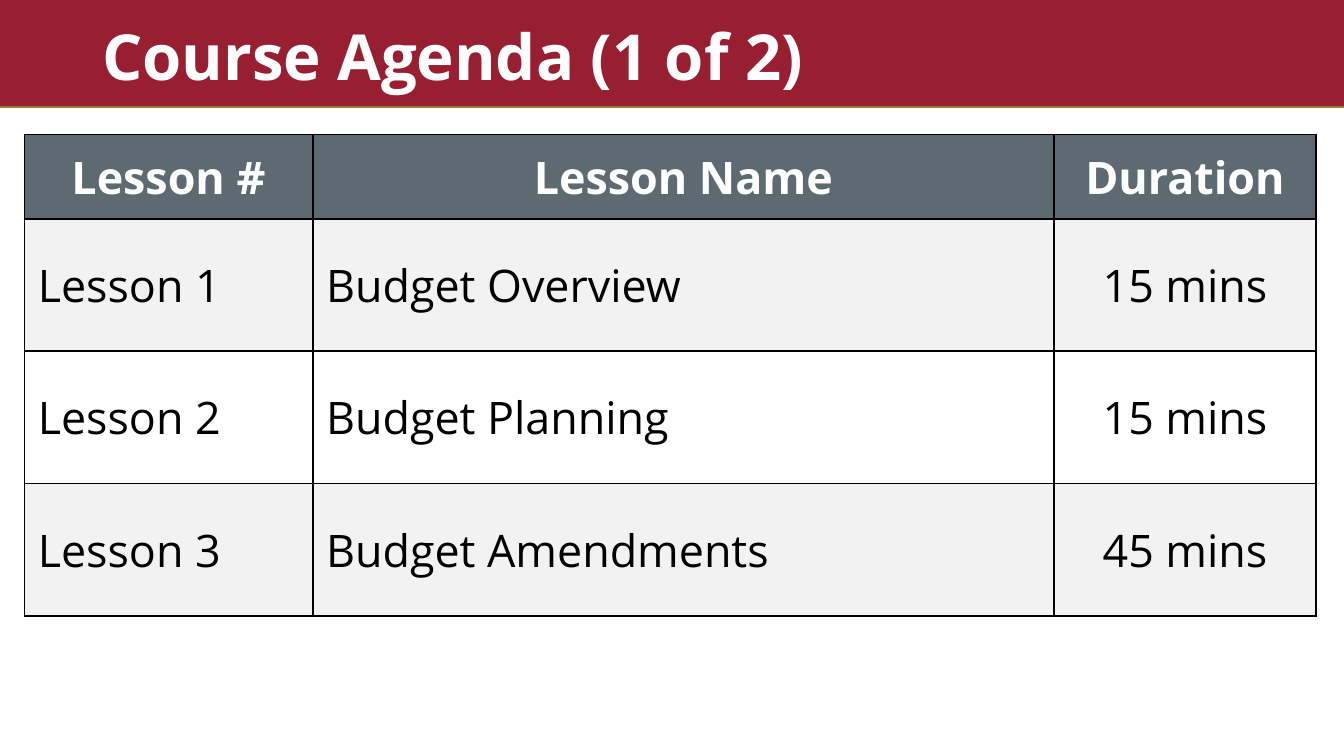
import pptx
import pptx.dml.color
import pptx.enum.shapes
import pptx.enum.text
import pptx.oxml
import pptx.oxml.ns
import pptx.util
from pptx.util import Cm, Pt

FONT = "Open Sans"
TITLE = "Course Agenda (1 of 2)"
AGENDA = [
    ("Lesson #", "Lesson Name", "Duration"),
    ("Lesson 1", "Budget Overview", "15 mins"),
    ("Lesson 2", "Budget Planning", "15 mins"),
    ("Lesson 3", "Budget Amendments", "45 mins"),
]
COLUMN_WIDTHS = [5.45, 14.01, 4.95]
HEADER_HEIGHT, LESSON_HEIGHT = 1.6, 2.5
PAGE_WIDTH, PAGE_HEIGHT, BANNER_HEIGHT = 25.4, 14.29, 2.03
CRIMSON, GOLD, SLATE, PALE = "981E32", "8F7E35", "5E6A71", "F2F2F2"
WHITE, BLACK = "FFFFFF", "000000"

ALIGN = pptx.enum.text.PP_ALIGN
ANCHOR = pptx.enum.text.MSO_ANCHOR


def color(code):
    return pptx.dml.color.RGBColor.from_string(code)


def style(paragraph, size, code, bold):
    for span in paragraph.runs:
        span.font.name = FONT
        span.font.size = Pt(size)
        span.font.bold = bold
        span.font.color.rgb = color(code)


def add_borders(cell):
    """Outline a cell; call before filling it, as the schema puts lines first."""
    properties = cell._tc.get_or_add_tcPr()
    for side in ("lnL", "lnR", "lnT", "lnB"):
        properties.append(pptx.oxml.parse_xml(
            f'<a:{side} {pptx.oxml.ns.nsdecls("a")} w="{Pt(1)}"><a:solidFill>'
            f'<a:srgbClr val="{BLACK}"/></a:solidFill></a:{side}>'))


def add_banner(page):
    banner = page.shapes.add_shape(
        pptx.enum.shapes.MSO_SHAPE.RECTANGLE, 0, 0, Cm(PAGE_WIDTH), Cm(BANNER_HEIGHT))
    banner.shadow.inherit = False
    banner.fill.solid()
    banner.fill.fore_color.rgb = color(CRIMSON)
    banner.line.fill.background()

    rule = page.shapes.add_connector(
        pptx.enum.shapes.MSO_CONNECTOR.STRAIGHT,
        0, Cm(BANNER_HEIGHT), Cm(PAGE_WIDTH), Cm(BANNER_HEIGHT))
    rule.line.color.rgb = color(GOLD)
    rule.line.width = Pt(1)
    rule._element.spPr.append(pptx.oxml.parse_xml(
        f'<a:effectLst {pptx.oxml.ns.nsdecls("a")}/>'))

    box = page.shapes.add_textbox(Cm(0.66), Cm(0.33), Cm(24.56), Cm(1.57))
    frame = box.text_frame
    frame.word_wrap = True
    frame.vertical_anchor = ANCHOR.BOTTOM
    frame.margin_left = frame.margin_right = Cm(1.27)
    frame.text = TITLE
    frame.paragraphs[0].line_spacing = 0.9
    style(frame.paragraphs[0], 34, WHITE, True)


def add_agenda(page):
    heights = [HEADER_HEIGHT] + [LESSON_HEIGHT] * (len(AGENDA) - 1)
    table = page.shapes.add_table(
        len(AGENDA), len(COLUMN_WIDTHS), Cm(0.46), Cm(2.54),
        Cm(sum(COLUMN_WIDTHS)), Cm(sum(heights))).table
    for column, width in zip(table.columns, COLUMN_WIDTHS):
        column.width = Cm(width)
    for row, height in zip(table.rows, heights):
        row.height = Cm(height)

    for i, lesson in enumerate(AGENDA):
        header = i == 0
        fill = SLATE if header else PALE if i % 2 else WHITE
        for j, text in enumerate(lesson):
            cell = table.cell(i, j)
            add_borders(cell)
            cell.fill.solid()
            cell.fill.fore_color.rgb = color(fill)
            cell.vertical_anchor = ANCHOR.MIDDLE
            cell.text_frame.text = text
            paragraph = cell.text_frame.paragraphs[0]
            centered = header or j == len(lesson) - 1
            paragraph.alignment = ALIGN.CENTER if centered else ALIGN.LEFT
            style(paragraph, 24, WHITE if header else BLACK, header)


def main():
    deck = pptx.Presentation()
    deck.slide_width, deck.slide_height = Cm(PAGE_WIDTH), Cm(PAGE_HEIGHT)
    page = deck.slides.add_slide(deck.slide_layouts[6])
    add_banner(page)
    add_agenda(page)
    deck.save("out.pptx")


if __name__ == "__main__":
    main()
